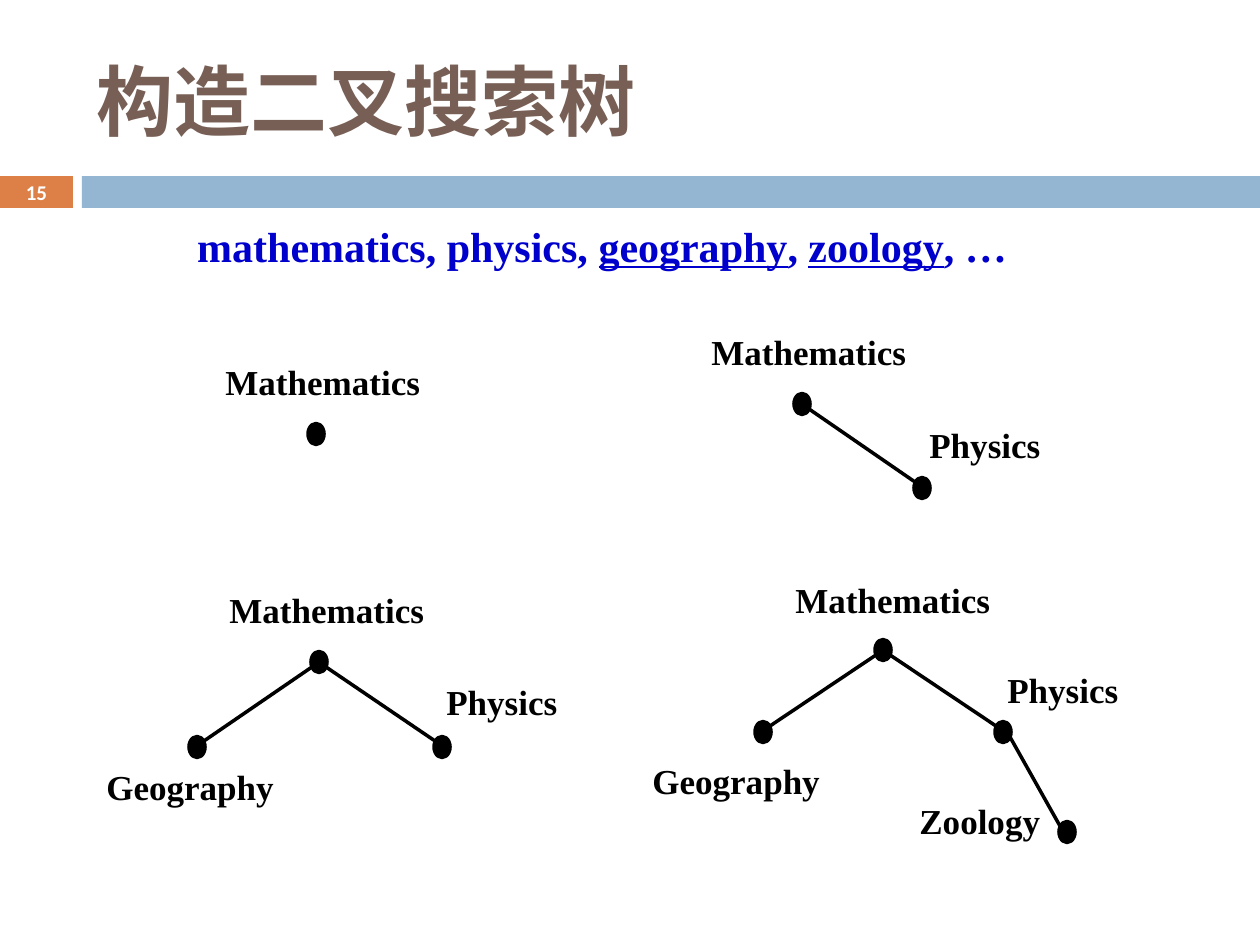
"""Build a slide showing how a binary search tree grows word by word."""
from lxml import etree
from pptx import Presentation
from pptx.dml.color import RGBColor
from pptx.enum.shapes import MSO_CONNECTOR, MSO_SHAPE
from pptx.enum.text import MSO_ANCHOR, PP_ALIGN
from pptx.oxml.ns import qn
from pptx.util import Pt

PX = 914400 / 126
RECT, OVAL, STRAIGHT = MSO_SHAPE.RECTANGLE, MSO_SHAPE.OVAL, MSO_CONNECTOR.STRAIGHT
LEFT, CENTER, JUSTIFY = PP_ALIGN.LEFT, PP_ALIGN.CENTER, PP_ALIGN.JUSTIFY
TOP, MIDDLE = MSO_ANCHOR.TOP, MSO_ANCHOR.MIDDLE
COLORS = {"orange": "DD8047", "blue": "94B6D2", "words": "0000CC",
          "title": "775F55", "black": "000000", "white": "FFFFFF"}
SERIF = {"name": "Times New Roman", "bold": True}
LABEL = {**SERIF, "size": Pt(20)}
WORDS = {**SERIF, "size": Pt(24)}
TITLE = {**SERIF, "size": Pt(44)}
NUMBER = {"name": "Calibri", "bold": True, "size": Pt(12)}


def add_shape(shapes, kind, box, color):
    sp = shapes.add_shape(kind, *[round(v * PX) for v in box])
    sp.shadow.inherit = False
    sp.fill.solid()
    sp.fill.fore_color.rgb = RGBColor.from_string(COLORS[color])
    sp.line.fill.background()
    return sp


def add_text(shapes, box, runs, font, color, align, anchor=TOP):
    tb = shapes.add_textbox(*[round(v * PX) for v in box])
    tf = tb.text_frame
    tf.word_wrap = True
    tf.vertical_anchor = anchor
    p = tf.paragraphs[0]
    p.alignment = align
    for text, underline in runs:
        r = p.add_run()
        r.text = text
        for key, value in font.items():
            setattr(r.font, key, value)
        r.font.underline = underline
        r.font.color.rgb = RGBColor.from_string(COLORS[color])
    return p


prs = Presentation()
prs.slide_width, prs.slide_height = round(1260 * PX), round(945 * PX)
s = prs.slides.add_slide(prs.slide_layouts[6])

add_shape(s.shapes, RECT, (0, 176, 73, 32), "orange")
add_shape(s.shapes, RECT, (82, 176, 1178, 32), "blue")
words = [("mathematics, physics, ", False), ("geography", True), (", ", False),
         ("zoology", True), (", …", False)]
p = add_text(s.shapes, (44, 204, 1116, 89), words, WORDS, "words", CENTER)
p.line_spacing = 1.2

# name, dot centre, label corner, index of the parent
TREES = [
    [("Physics", (922, 488), (917, 417), 1),
     ("Mathematics", (802, 404), (699, 324), None)],
    [("Zoology", (1067, 832), (907, 793), 1),
     ("Physics", (1003, 732), (995, 662), 3),
     ("Geography", (763, 732), (640, 753), 3),
     ("Mathematics", (883, 650), (783, 572), None)],
    [("Physics", (442, 747), (434, 674), 2),
     ("Geography", (197, 747), (94, 759), 2),
     ("Mathematics", (319, 662), (217, 582), None)],
    [("Mathematics", (316, 434), (213, 354), None)],
]
LABEL_W = {"Mathematics": 274, "Physics": 175, "Geography": 202, "Zoology": 166}
DOT_W, DOT_H, LABEL_H = 16, 21, 60

for tree in TREES:
    grp = s.shapes.add_group_shape()
    for name, (x, y), corner, parent in tree:
        dot = add_shape(grp.shapes, OVAL,
                        (x - DOT_W / 2, y - DOT_H / 2, DOT_W, DOT_H), "black")
        dot.line.color.rgb = RGBColor.from_string(COLORS["black"])
        dot.line.width = Pt(2)
        if parent is not None:
            px, py = tree[parent][1]
            dx = 7 if x > px else -7
            ends = (px + dx, py + 5, x - dx, y - 6)
            edge = grp.shapes.add_connector(STRAIGHT, *[round(v * PX) for v in ends])
            edge.line.color.rgb = RGBColor.from_string(COLORS["black"])
            edge.line.width = Pt(2)
            etree.SubElement(edge._element.spPr, qn("a:effectLst"))
        add_text(grp.shapes, (*corner, LABEL_W[name], LABEL_H), [(name, False)],
                 LABEL, "black", JUSTIFY)

add_text(s.shapes, (0, 175, 73, 34), [("15", False)], NUMBER, "white", CENTER, MIDDLE)
add_text(s.shapes, (84, 32, 1124, 136), [("构造二叉搜索树", False)],
         TITLE, "title", LEFT, MIDDLE)
prs.save("out.pptx")
